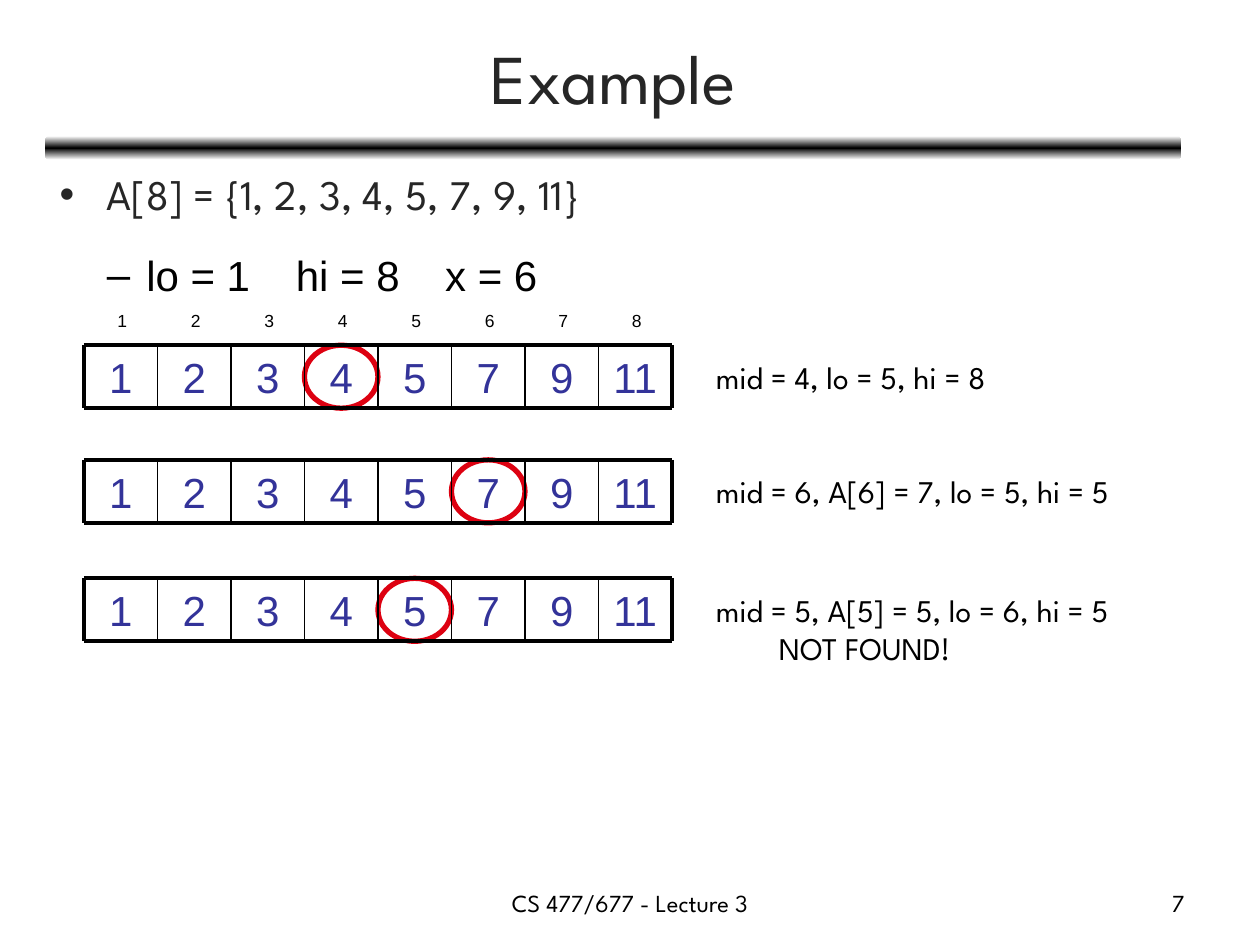
from lxml import etree
from pptx import Presentation
from pptx import util as u
from pptx.dml import color
from pptx.enum import shapes, text
from pptx.oxml import ns

Pt = u.Pt
SANS, ARIAL = "League Spartan", "Arial"
BLACK, DARK, BLUE, RED = "000000", "262626", "333399", "DD0111"
LEFT, CENTER, RIGHT = (text.PP_ALIGN.LEFT, text.PP_ALIGN.CENTER,
                       text.PP_ALIGN.RIGHT)
VALUES = [1, 2, 3, 4, 5, 7, 9, 11]
CELL, HIGH = 42, 36


def rgb(code):
    return color.RGBColor.from_string(code)


def add_sub(node, tag, **attrs):
    return etree.SubElement(node, ns.qn(tag), attrs)


def add_text(slide, box, lines, size, font=SANS, tint=BLACK, align=LEFT,
             middle=False):
    shape = slide.shapes.add_textbox(*map(Pt, box))
    frame = shape.text_frame
    frame.word_wrap = True
    if middle:
        frame.vertical_anchor = text.MSO_ANCHOR.MIDDLE
    for i, line in enumerate(lines):
        para = frame.paragraphs[0] if i == 0 else frame.add_paragraph()
        para.alignment = align
        run = para.add_run()
        run.text = line
        run.font.size, run.font.name = Pt(size), font
        run.font.color.rgb = rgb(tint)
    return frame.paragraphs[0]


def add_bullet(para, mark, left, hang, tabs=()):
    para.space_before = Pt(4.8)
    props = para._p.get_or_add_pPr()
    props.set("marL", str(Pt(left)))
    props.set("indent", str(-Pt(hang)))
    add_sub(props, "a:buFont", typeface=ARIAL)
    add_sub(props, "a:buChar", char=mark)
    if tabs:
        stops = add_sub(props, "a:tabLst")
        for tab in tabs:
            add_sub(stops, "a:tab", pos=str(Pt(tab)), algn="l")


def add_line(slide, x1, y1, x2, y2, width):
    line = slide.shapes.add_connector(
        shapes.MSO_CONNECTOR.STRAIGHT, Pt(x1), Pt(y1), Pt(x2), Pt(y2))
    line.line.color.rgb = rgb(BLACK)
    line.line.width = Pt(width)
    add_sub(line._element.spPr, "a:effectLst")


def add_bar(slide, box):
    bar = slide.shapes.add_shape(
        shapes.MSO_SHAPE.ROUNDED_RECTANGLE, *map(Pt, box))
    bar.shadow.inherit = False
    bar.line.fill.background()
    bar.fill.gradient()
    bar.fill.gradient_angle = 270
    # Three stops: white, black, white
    stops = bar._element.spPr.find(ns.qn("a:gradFill")).find(ns.qn("a:gsLst"))
    for stop in list(stops):
        stops.remove(stop)
    for pos, tint in ((0, "FFFFFF"), (50, BLACK), (100, "FFFFFF")):
        stop = add_sub(stops, "a:gs", pos=str(pos * 1000))
        add_sub(stop, "a:srgbClr", val=tint)


def add_ring(slide, box):
    ring = slide.shapes.add_shape(shapes.MSO_SHAPE.OVAL, *map(Pt, box))
    ring.shadow.inherit = False
    ring.fill.background()
    ring.line.color.rgb = rgb(RED)
    ring.line.width = Pt(3)


def add_array(slide, left, top, mid):
    """One search step: the array with its middle cell ringed."""
    count = len(VALUES)
    right, base = left + count * CELL, top + HIGH
    add_ring(slide, (left + (mid - 1) * CELL, top, CELL, HIGH))
    for i, value in enumerate(VALUES):
        para = add_text(slide, (left + i * CELL, top, CELL, HIGH),
                        [str(value)], 24, ARIAL, BLUE, CENTER, True)
        para.space_before = Pt(4.8)
    for y in (top, base):
        add_line(slide, left, y, right, y, 2.25)
    for i in range(count + 1):
        x = left + i * CELL
        add_line(slide, x, top, x, base, 2.25 if i in (0, count) else 1)


def add_index(slide, left, top):
    for i in range(len(VALUES)):
        add_text(slide, (left + i * CELL, top, 18, 19.4),
                 [str(i + 1)], 10, ARIAL)


def add_head(slide, box):
    add_text(slide, box, ["Example"], 40, tint=DARK, align=CENTER, middle=True)
    add_bar(slide, (26, 77.8, 649, 13.5))


def add_intro(slide, left, top, width):
    para = add_text(slide, (left, top, width, 36),
                    ["A[8] = {1, 2, 3, 4, 5, 7, 9, 11}"], 24, tint=DARK)
    para.line_spacing = 0.9
    add_bullet(para, "•", 27, 27)
    para = add_text(slide, (left - 9, top + 43, width, 42),
                    ["lo = 1\thi = 8\tx = 6"], 24, ARIAL)
    add_bullet(para, "–", 58.5, 22.5, (144, 229.3))


def add_steps(slide, left, note):
    steps = [
        (197.3, 4, ["mid = 4, lo = 5, hi = 8"]),
        (262.8, 6, ["mid = 6, A[6] = 7, lo = 5, hi = 5"]),
        (330.5, 5, ["mid = 5, A[5] = 5, lo = 6, hi = 5", "\tNOT FOUND!"]),
    ]
    add_index(slide, left + 12, 173.5)
    for top, mid, lines in steps:
        add_array(slide, left, top, mid)
        add_text(slide, (note, top + 3.6, 270, 7 + 22 * len(lines)), lines, 18)


def add_foot(slide, top):
    add_text(slide, (246, top, 228, 25), ["CS 477/677 - Lecture 3"], 14,
             align=CENTER)
    add_text(slide, (516, top, 168, 25), ["7"], 14, align=RIGHT)


def main():
    deck = Presentation()
    deck.slide_width, deck.slide_height = Pt(720), Pt(540)
    slide = deck.slides.add_slide(deck.slide_layouts[6])
    add_head(slide, (26.5, 8, 648, 71))
    add_intro(slide, 27, 96, 650)
    add_steps(slide, 48, 402)
    add_foot(slide, 504)
    deck.save("out.pptx")


if __name__ == "__main__":
    main()
